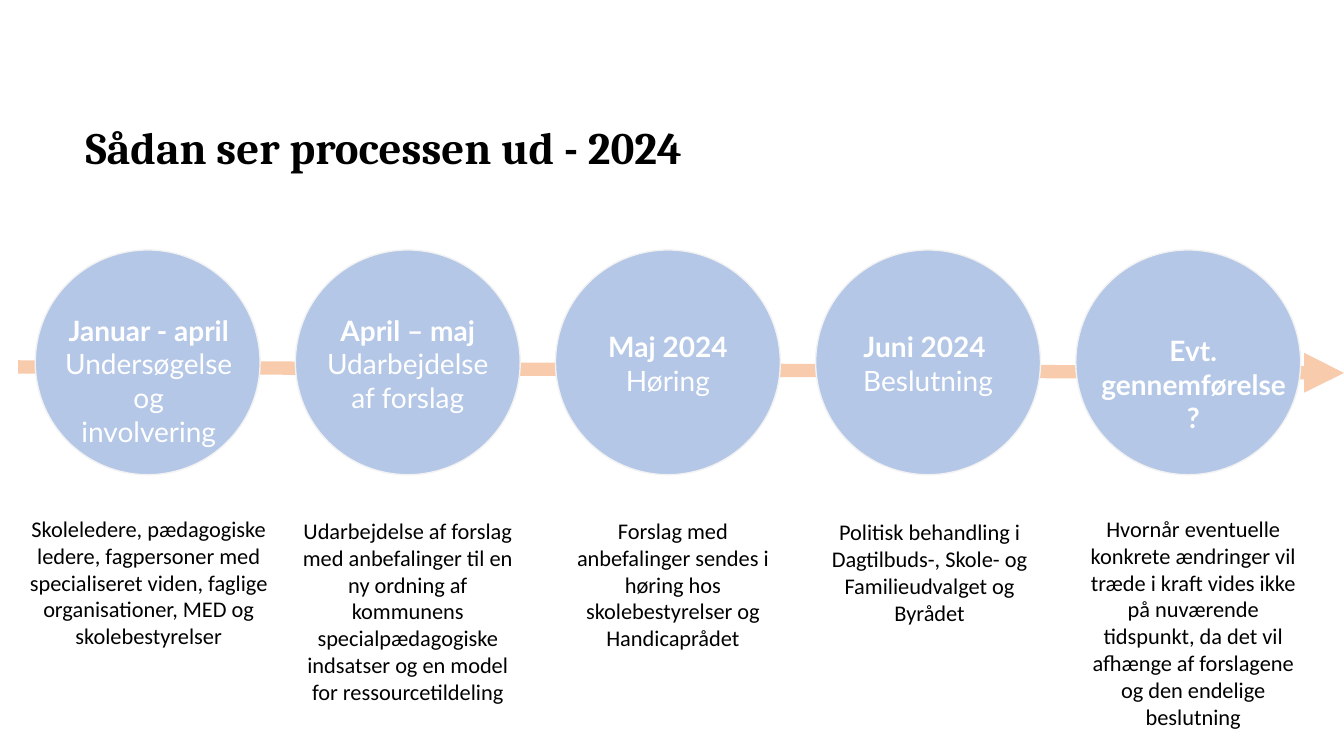
from dataclasses import dataclass
from typing import Any

import lxml.etree
import pptx
import pptx.dml.color
import pptx.enum.shapes
import pptx.enum.text
import pptx.oxml.ns
import pptx.util

EMU_PER_PX = 9144
COLORS = {
    "circle": "B4C7E7",
    "outline": "F2F2F2",
    "arrow": "F8CBAD",
    "light": "FFFFFF",
    "dark": "000000",
}
CIRCLE_LEFT, CIRCLE_TOP, CIRCLE_SIZE, CIRCLE_STEP = 35, 248, 223, 258


@dataclass
class Box:
    left: int
    top: int
    width: int
    height: int


@dataclass
class Run:
    text: str
    bold: bool = False


@dataclass
class Style:
    font: str
    size: int
    color: str
    paragraph: dict[str, Any]


@dataclass
class Stage:
    label: list[list[Run]]
    label_box: Box
    details: str
    details_box: Box


CENTERED = {"alignment": pptx.enum.text.PP_ALIGN.CENTER}
TITLE = Style("Cambria", 32, "dark", {"line_spacing": 1.07, "space_after": pptx.util.Pt(8)})
LABEL = Style("Lato", 20, "light", CENTERED)
DETAILS = Style("Calibri", 16, "dark", CENTERED)

STAGES = [
    Stage(
        [[Run("Januar - april ", True), Run("Undersøgelse og involvering")]],
        Box(54, 306, 187, 106),
        "Skoleledere, pædagogiske ledere, fagpersoner med specialiseret viden, "
        "faglige organisationer, MED og skolebestyrelser",
        Box(7, 506, 281, 145),
    ),
    Stage(
        [[Run("April – maj ", True), Run("Udarbejdelse af forslag")]],
        Box(311, 306, 187, 106),
        "Udarbejdelse af forslag med anbefalinger til en ny ordning af kommunens "
        "specialpædagogiske indsatser og en model for ressourcetildeling",
        Box(281, 508, 247, 199),
    ),
    Stage(
        [[Run("Maj 2024 ", True), Run("Høring")]],
        Box(569, 322, 187, 74),
        "Forslag med anbefalinger sendes i høring hos skolebestyrelser og Handicaprådet",
        Box(551, 508, 233, 145),
    ),
    Stage(
        [[Run("Juni 2024 ", True)], [Run("Beslutning")]],
        Box(827, 322, 187, 74),
        "Politisk behandling i Dagtilbuds-, Skole- og Familieudvalget og Byrådet",
        Box(809, 509, 226, 118),
    ),
    Stage(
        [[Run("Evt. gennemførelse?", True)]],
        Box(1077, 326, 213, 77),
        "Hvornår eventuelle konkrete ændringer vil træde i kraft vides ikke på "
        "nuværende tidspunkt, da det vil afhænge af forslagene og den endelige beslutning",
        Box(1067, 506, 233, 226),
    ),
]


def px(length: int) -> pptx.util.Emu:
    return pptx.util.Emu(length * EMU_PER_PX)


def emu(box: Box) -> list[pptx.util.Emu]:
    return [px(length) for length in (box.left, box.top, box.width, box.height)]


def rgb(name: str) -> pptx.dml.color.RGBColor:
    return pptx.dml.color.RGBColor.from_string(COLORS[name])


def apply(target: Any, values: dict[str, Any]) -> None:
    for attribute, value in values.items():
        setattr(target, attribute, value)


def add_text(shapes: Any, box: Box, paragraphs: list[list[Run]], style: Style) -> None:
    frame = shapes.add_textbox(*emu(box)).text_frame
    apply(frame, {"word_wrap": True, "auto_size": pptx.enum.text.MSO_AUTO_SIZE.SHAPE_TO_FIT_TEXT})
    for index, parts in enumerate(paragraphs):
        paragraph = frame.add_paragraph() if index else frame.paragraphs[0]
        apply(paragraph, style.paragraph)
        for part in parts:
            run = paragraph.add_run()
            run.text = part.text
            apply(run.font, {"name": style.font, "size": pptx.util.Pt(style.size), "bold": part.bold})
            run.font.color.rgb = rgb(style.color)


def add_timeline(shapes: Any) -> None:
    timeline = shapes.add_connector(
        pptx.enum.shapes.MSO_CONNECTOR.STRAIGHT, px(18), px(364), px(1333), px(370)
    )
    timeline.line.width = pptx.util.Pt(9.5)
    timeline.line.color.rgb = rgb("arrow")
    qn = pptx.oxml.ns.qn
    lxml.etree.SubElement(timeline.line._get_or_add_ln(), qn("a:tailEnd"), type="triangle")
    lxml.etree.SubElement(timeline._element.spPr, qn("a:effectLst"))


def add_circle(shapes: Any, index: int) -> None:
    box = Box(CIRCLE_LEFT + index * CIRCLE_STEP, CIRCLE_TOP, CIRCLE_SIZE, CIRCLE_SIZE)
    circle = shapes.add_shape(pptx.enum.shapes.MSO_SHAPE.OVAL, *emu(box))
    circle.shadow.inherit = False
    circle.fill.solid()
    circle.fill.fore_color.rgb = rgb("circle")
    circle.line.color.rgb = rgb("outline")
    circle.line.width = pptx.util.Pt(1)


def main() -> None:
    deck = pptx.Presentation()
    apply(deck, {"slide_width": px(1333), "slide_height": px(750)})
    shapes = deck.slides.add_slide(deck.slide_layouts[6]).shapes
    add_timeline(shapes)
    add_text(shapes, Box(75, 110, 833, 133), [[Run("Sådan ser processen ud - 2024", True)]], TITLE)
    for index, stage in enumerate(STAGES):
        milestone = shapes.add_group_shape().shapes
        add_circle(milestone, index)
        add_text(milestone, stage.label_box, stage.label, LABEL)
    for stage in STAGES:
        add_text(shapes, stage.details_box, [[Run(stage.details)]], DETAILS)
    deck.save("out.pptx")


if __name__ == "__main__":
    main()
